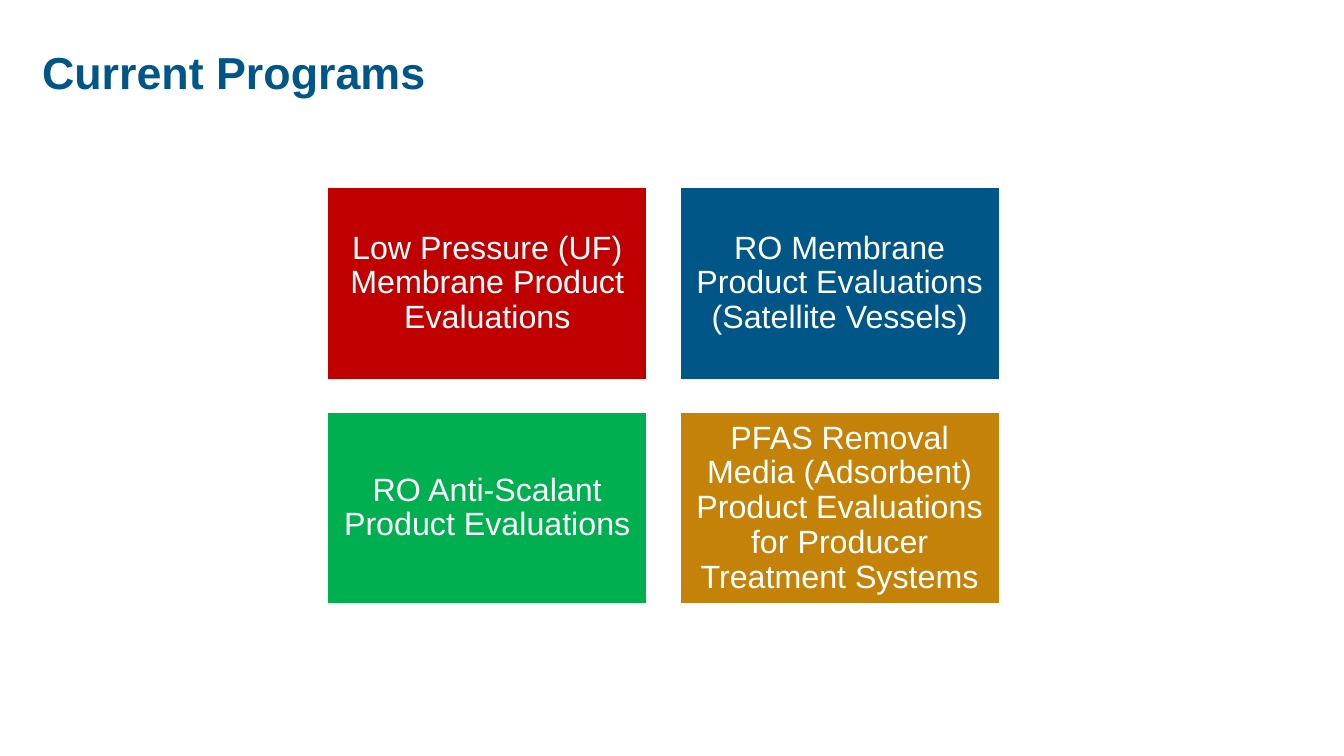
from dataclasses import dataclass

from pptx import Presentation
from pptx.dml.color import RGBColor
from pptx.enum.shapes import MSO_SHAPE
from pptx.enum.text import MSO_ANCHOR, PP_ALIGN
from pptx.util import Cm, Pt


@dataclass
class Theme:
    font: str = "Arial"
    red: str = "C00000"
    blue: str = "005687"
    green: str = "00B050"
    gold: str = "C58209"
    white: str = "FFFFFF"
    title: float = 32
    body: float = 23


theme = Theme()


def write(shape, text, size, color, bold=False, align=PP_ALIGN.LEFT):
    frame = shape.text_frame
    frame.word_wrap = True
    frame.vertical_anchor = MSO_ANCHOR.MIDDLE
    frame.text = text
    para = frame.paragraphs[0]
    para.alignment = align
    para.line_spacing = 0.9
    font = para.runs[0].font
    font.name, font.size, font.bold = theme.font, Pt(size), bold
    font.color.rgb = RGBColor.from_string(color)


deck = Presentation()
deck.slide_width, deck.slide_height = Cm(33.87), Cm(19.05)
slide = deck.slides.add_slide(deck.slide_layouts[6])

# Title
title = slide.shapes.add_textbox(Cm(0.81), Cm(0.41), Cm(20.45), Cm(2.95))
write(title, "Current Programs", theme.title, theme.blue, bold=True)

# Program cards, two per row
programs = [
    ("Low Pressure (UF) Membrane Product Evaluations", theme.red),
    ("RO Membrane Product Evaluations (Satellite Vessels)", theme.blue),
    ("RO Anti-Scalant Product Evaluations", theme.green),
    ("PFAS Removal Media (Adsorbent) Product Evaluations "
     "for Producer Treatment Systems", theme.gold),
]
left, top = 8.26, 4.73
width, height, gap = 8.05, 4.83, 0.83

for index, (label, color) in enumerate(programs):
    row, col = divmod(index, 2)
    card = slide.shapes.add_shape(
        MSO_SHAPE.RECTANGLE,
        Cm(left + col * (width + gap)), Cm(top + row * (height + gap)),
        Cm(width), Cm(height))
    card.shadow.inherit = False
    card.fill.solid()
    card.fill.fore_color.rgb = RGBColor.from_string(color)
    card.line.color.rgb = RGBColor.from_string(theme.white)
    card.line.width = Pt(1)
    frame = card.text_frame
    frame.margin_left = frame.margin_right = Cm(0.24)
    frame.margin_top = frame.margin_bottom = Cm(0.24)
    write(card, label, theme.body, theme.white, align=PP_ALIGN.CENTER)

deck.save("out.pptx")
